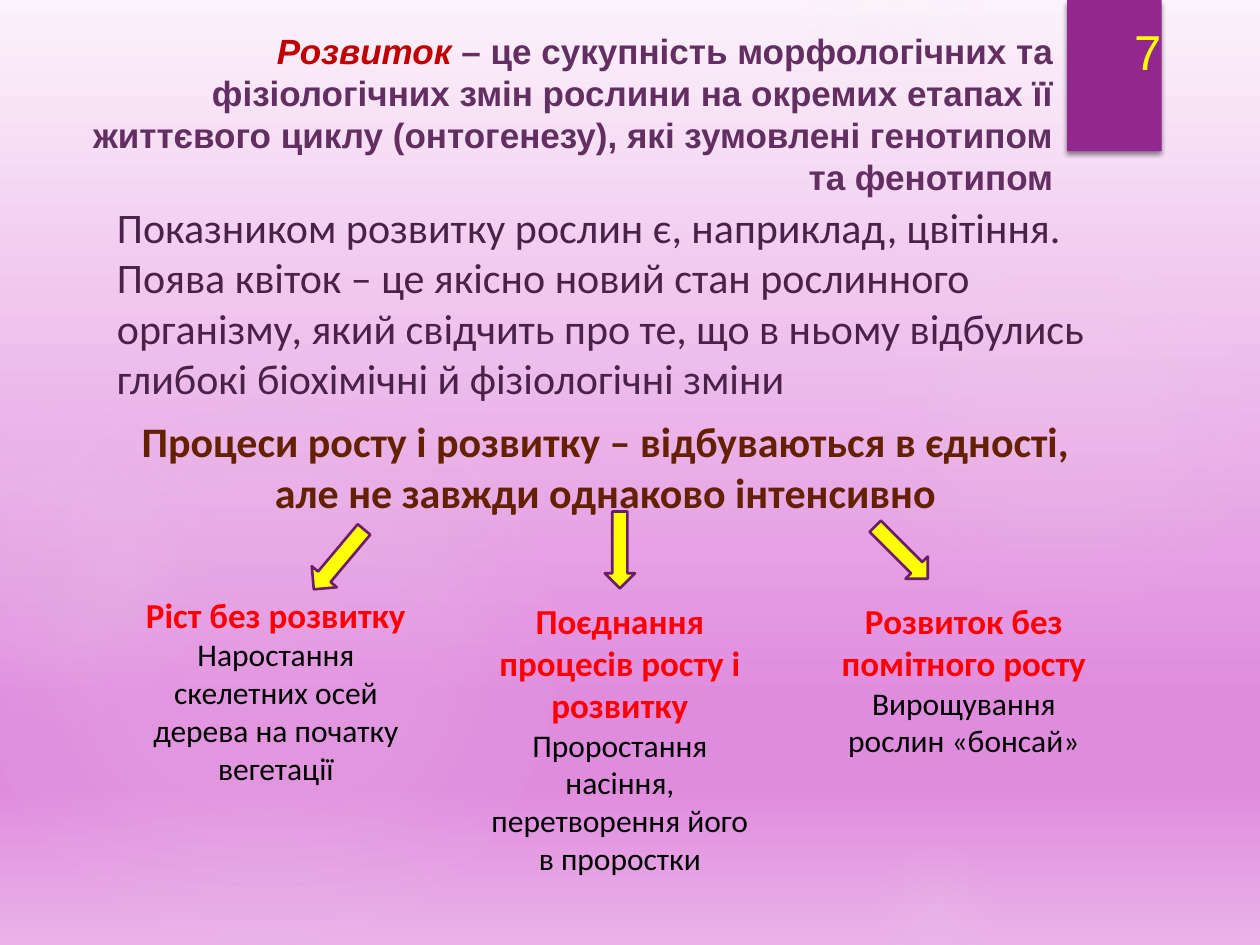
from lxml.etree import SubElement
from pptx import Presentation
from pptx.dml.color import RGBColor
from pptx.enum.shapes import MSO_SHAPE
from pptx.enum.text import MSO_ANCHOR, MSO_AUTO_SIZE, PP_ALIGN
from pptx.oxml.ns import qn
from pptx.util import Inches, Pt

LEFT, MID, RIGHT = PP_ALIGN.LEFT, PP_ALIGN.CENTER, PP_ALIGN.RIGHT


def rgb(code):
    return RGBColor.from_string(code)


def add(parent, tag, **attrs):
    return SubElement(parent, qn(tag), {k: str(v) for k, v in attrs.items()})


def tint(parent, code, alpha):
    add(add(parent, "a:srgbClr", val=code), "a:alpha", val=alpha * 1000)


def shade(parent, blur, dist, alpha):
    """Give a shape or a run a soft black shadow falling down."""
    glow = add(parent, "a:effectLst")
    drop = add(glow, "a:outerShdw", blurRad=Pt(blur), dist=Pt(dist),
               dir=5400000, algn="ctr", rotWithShape=0)
    tint(drop, "000000", alpha)
    return glow


def blend(owner, stops, round_=False):
    """Fill the owner's gradient with (place, colour, alpha) stops."""
    grad = owner.find(".//" + qn("a:gradFill"))
    for child in list(grad):
        grad.remove(child)
    row = add(grad, "a:gsLst")
    for place, code, alpha in stops:
        tint(add(row, "a:gs", pos=place * 1000), code, alpha)
    if round_:
        way = add(grad, "a:path", path="circle")
        add(way, "a:fillToRect", l=50000, t=50000, r=50000, b=50000)
    else:
        add(grad, "a:lin", ang=5400000, scaled=0)


class Page:
    """Slide laid out on a grid of 100 columns by 75 rows."""
    cols, rows = 100, 75

    def __init__(self):
        self.deck = Presentation()
        self.deck.slide_width = Inches(10)
        self.deck.slide_height = Inches(7.5)
        self.slide = self.deck.slides.add_slide(self.deck.slide_layouts[5])
        self.shapes = self.slide.shapes

    def cell(self, x, y, w, h):
        wide = self.deck.slide_width / self.cols
        high = self.deck.slide_height / self.rows
        return [round(n) for n in (x * wide, y * high, w * wide, h * high)]

    def back(self, stops):
        fill = self.slide.background.fill
        fill.gradient()
        blend(self.slide.element, stops)

    def form(self, kind, area, fill=None, line=None):
        shape = self.shapes.add_shape(kind, *self.cell(*area))
        shape.shadow.inherit = False
        if fill:
            shape.fill.solid()
            shape.fill.fore_color.rgb = rgb(fill)
        if line:
            shape.line.color.rgb = rgb(line)
            shape.line.width = Pt(1.5)
        else:
            shape.line.fill.background()
        return shape

    def orb(self, x, y, size, alphas, edge):
        shape = self.form(MSO_SHAPE.OVAL, (x, y, size, size))
        shape.fill.gradient()
        stops = zip((0, 36, edge), ("F2EFF3",) * 3, (*alphas, 0))
        blend(shape.element, stops, True)

    def flag(self, area):
        shape = self.form(MSO_SHAPE.RECTANGLE, area, "92278F")
        props = shape.element.spPr
        props.remove(props.find(qn("a:effectLst")))
        shade(props, 3, 2, 45)

    def arrow(self, area, turn):
        shape = self.form(MSO_SHAPE.DOWN_ARROW, area, "FFFF00", "6C1D6A")
        shape.rotation = turn

    def style(self, run, size, code, face="Calibri", bold=False, slant=False):
        font = run.font
        font.size, font.name = Pt(size), face
        font.bold, font.italic = bold, slant
        font.color.rgb = rgb(code)

    def text(self, area, lines, align=MID, anchor=MSO_ANCHOR.TOP, drop=False):
        """Each line is (words, size, colour, face, bold)."""
        box = self.shapes.add_textbox(*self.cell(*area))
        frame = box.text_frame
        frame.word_wrap = True
        frame.vertical_anchor = anchor
        frame.text = "\n".join(line[0] for line in lines)
        for para, line in zip(frame.paragraphs, lines):
            para.alignment = align
            run = para.runs[0]
            self.style(run, *line[1:])
            if drop:
                props = run.font.color and run._r.get_or_add_rPr()
                glow = shade(props, 3, 2, 45)
                props.find(qn("a:solidFill")).addnext(glow)

    def title(self, area, parts):
        """Each part is (words, colour, italic)."""
        box = self.shapes.title
        box.left, box.top, box.width, box.height = self.cell(*area)
        box.element.getparent().append(box.element)
        frame = box.text_frame
        frame.word_wrap = True
        frame.auto_size = MSO_AUTO_SIZE.NONE
        frame.vertical_anchor = MSO_ANCHOR.MIDDLE
        para = frame.paragraphs[0]
        para.alignment = RIGHT
        para.line_spacing = Pt(24)
        for words, code, slant in parts:
            run = para.add_run()
            run.text = words
            self.style(run, 20, code, "Arial", True, slant)


def main():
    page = Page()

    # Backdrop: gradient, faint orbs and the number flag
    page.back([(0, "FCF2FB", 100), (74, "E08CDE", 100),
               (83, "E08CDE", 100), (100, "EAB2E9", 100)])
    for orb in [(68.9, 18.3, 30.8, (7, 6), 69), (62.2, -5, 17.5, (14, 7), 73),
                (68.9, 66.7, 10.8, (9, 5), 66), (-1.7, 29.2, 45.8, (11, 10), 75),
                (-9.2, 31.7, 25.8, (8, 8), 72)]:
        page.orb(*orb)
    page.flag((84.7, 0, 7.5, 12))

    # Definition and explanation
    page.title((3.5, 1.3, 81.1, 15.4), [
        ("Розвиток ", "C00000", True),
        ("– це сукупність морфологічних та фізіологічних змін рослини на "
         "окремих етапах її життєвого циклу (онтогенезу), які зумовлені "
         "генотипом та фенотипом", "632E62", False)])
    page.text((8.3, 15.5, 79.5, 17.2), [
        ("Показником розвитку рослин є, наприклад, цвітіння. Поява квіток – "
         "це якісно новий стан рослинного організму, який свідчить про те, "
         "що в ньому відбулись глибокі біохімічні й фізіологічні зміни",
         24, "4A2249")], LEFT)
    page.text((8.3, 32.5, 79.5, 9.1), [
        ("Процеси росту і розвитку – відбуваються в єдності, але не завжди "
         "однаково інтенсивно", 24, "642100", "Calibri", True)])

    # Three cases, each under its arrow
    for x, y, high, head, note, arrow, turn in [
        (10.5, 46.6, 16.5, "Ріст без розвитку",
         "Наростання скелетних осей дерева на початку вегетації",
         (25.6, 41.3, 2.6, 6.2), 40),
        (37.8, 47.1, 23.2, "Поєднання процесів росту і розвитку",
         "Проростання насіння, перетворення його в проростки",
         (48, 40.6, 2.4, 6.1), 0),
        (65.1, 47.1, 13.8, "Розвиток без помітного росту",
         "Вирощування рослин «бонсай»",
         (70.3, 40.9, 2.5, 5.9), -45),
    ]:
        page.arrow(arrow, turn)
        page.text((x, y, 22.8, high),
                  [(head, 20, "FF0000", "Calibri", True),
                   (note, 18, "000000")], drop=True)

    # Slide number
    page.text((87.8, 0.2, 6.6, 6.7), [("7", 28, "FFFF00", "Arial")],
              anchor=MSO_ANCHOR.BOTTOM)
    page.deck.save("out.pptx")


if __name__ == "__main__":
    main()
